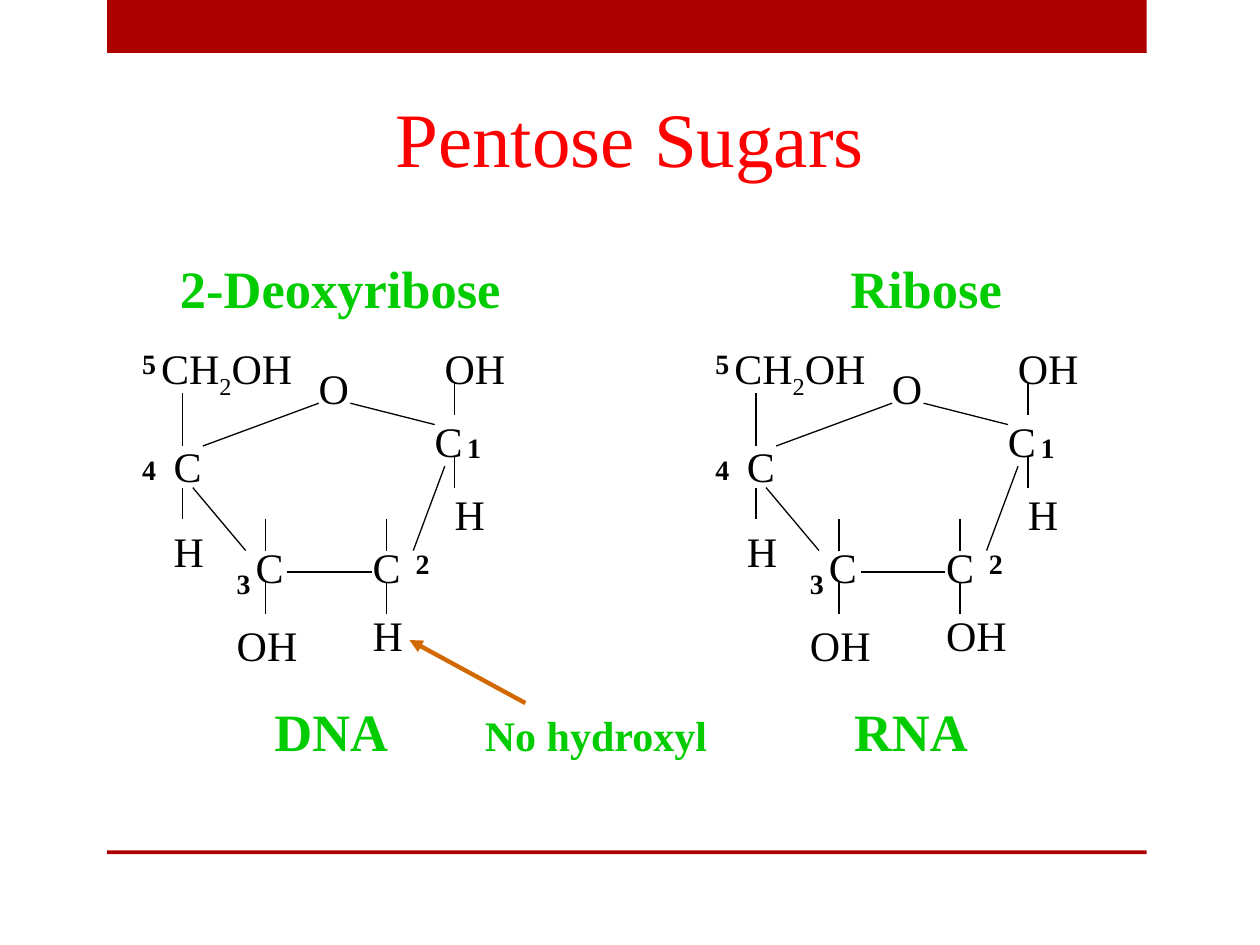
from lxml import etree
from pptx import Presentation
from pptx.dml.color import RGBColor
from pptx.enum.shapes import MSO_CONNECTOR, MSO_SHAPE
from pptx.enum.text import MSO_ANCHOR, MSO_AUTO_SIZE, PP_ALIGN
from pptx.oxml.ns import qn
from pptx.util import Inches, Pt

STRAIGHT = MSO_CONNECTOR.STRAIGHT
RECT = MSO_SHAPE.RECTANGLE
BOTTOM = MSO_ANCHOR.BOTTOM
CENTER = PP_ALIGN.CENTER
FIT_SHAPE = MSO_AUTO_SIZE.SHAPE_TO_FIT_TEXT
NO_FIT = MSO_AUTO_SIZE.NONE

FONT = "Times New Roman"
COLORS = {
    "band": "AD0101",
    "title": "FF0000",
    "label": "00CC00",
    "ink": "000000",
    "arrow": "D26900",
}


def add_text(shapes, x, y, w, h, parts, size, color="ink", bold=False):
    """Add a one-line text box; every second part is a subscript."""
    tb = shapes.add_textbox(Inches(x), Inches(y), Inches(w), Inches(h))
    tf = tb.text_frame
    tf.word_wrap = False
    tf.auto_size = FIT_SHAPE
    for i, part in enumerate(parts):
        r = tf.paragraphs[0].add_run()
        r.text = part
        r.font.name = FONT
        r.font.size = Pt(size)
        r.font.bold = bold
        r.font.color.rgb = RGBColor.from_string(COLORS[color])
        if i % 2:
            r.font._element.set("baseline", "-25000")
    return tf


def add_line(shapes, x1, y1, x2, y2, color="ink", width=0.75):
    ln = shapes.add_connector(STRAIGHT, Inches(x1), Inches(y1), Inches(x2), Inches(y2))
    ln.line.color.rgb = RGBColor.from_string(COLORS[color])
    ln.line.width = Pt(width)
    etree.SubElement(ln._element.spPr, qn("a:effectLst"))
    return ln


prs = Presentation()
prs.slide_width, prs.slide_height = Inches(10), Inches(7.5)
s = prs.slides.add_slide(prs.slide_layouts[6])

# Top band and bottom rule
for y, h in [(0, 0.42), (6.75, 0.03)]:
    sp = s.shapes.add_shape(RECT, Inches(0.85), Inches(y), Inches(8.25), Inches(h))
    sp.shadow.inherit = False
    sp.fill.solid()
    sp.fill.fore_color.rgb = RGBColor.from_string(COLORS["band"])
    sp.line.fill.background()

tf = add_text(s.shapes, 1, 0.58, 8, 0.92, ["Pentose Sugars"], 44, "title")
tf.word_wrap = True
tf.auto_size = NO_FIT
tf.vertical_anchor = BOTTOM
tf.paragraphs[0].alignment = CENTER

# Sugar ring, placed for the left-hand molecule
BONDS = [
    (2.53, 3.2, 1.61, 3.54),
    (2.78, 3.2, 3.45, 3.37),
    (1.53, 3.87, 1.95, 4.37),
    (3.53, 3.7, 3.28, 4.37),
    (2.28, 4.54, 2.95, 4.54),
    (1.45, 3.54, 1.45, 3.12),
]
# Short vertical bonds, all of one length: x, top
STUBS = [(3.61, 3.04), (3.61, 3.62), (2.11, 4.12), (2.11, 4.62),
         (3.07, 4.12), (3.07, 4.62), (1.45, 3.87)]
STUB_LENGTH = 0.25
ATOMS = [
    (2.43, 2.83, ["O"]),
    (1.28, 3.45, ["C"]),
    (3.35, 3.25, ["C"]),
    (1.93, 4.25, ["C"]),
    (2.86, 4.25, ["C"]),
    (1.18, 2.67, ["CH", "2", "OH"]),
    (3.43, 2.67, ["OH"]),
    (3.51, 3.83, ["H"]),
    (1.28, 4.12, ["H"]),
    (1.78, 4.87, ["OH"]),
]
ATOM_WIDTHS = {"C": 0.42, "O": 0.44, "H": 0.44, "OH": 0.68, "CH2OH": 1.26}
CARBON_NUMBERS = [(3.61, 3.37, "1"), (3.2, 4.29, "2"), (1.78, 4.45, "3"),
                  (1.03, 3.54, "4"), (1.03, 2.7, "5")]

# The molecules differ only in position and in the group on carbon 2
for dx, carbon2_group in [(0, "H"), (4.55, "OH")]:
    ring = s.shapes.add_group_shape().shapes
    for x1, y1, x2, y2 in BONDS:
        add_line(ring, x1 + dx, y1, x2 + dx, y2)
    for x, y in STUBS:
        add_line(ring, x + dx, y + STUB_LENGTH, x + dx, y)
    for x, y, parts in ATOMS + [(2.86, 4.79, [carbon2_group])]:
        add_text(ring, x + dx, y, ATOM_WIDTHS["".join(parts)], 0.5, parts, 24)
    for x, y, number in CARBON_NUMBERS:
        add_text(ring, x + dx, y, 0.31, 0.37, [number], 16, bold=True)

arrow = add_line(s.shapes, 3.25, 5.08, 4.17, 5.58, "arrow", 2.5)
etree.SubElement(arrow.line._get_or_add_ln(), qn("a:headEnd"), type="triangle")

for x, y, w, h, text, size in [
    (1.33, 1.98, 2.75, 0.6, "2-Deoxyribose", 30),
    (6.65, 1.98, 1.45, 0.6, "Ribose", 30),
    (2.08, 5.5, 1.1, 0.6, "DNA", 30),
    (6.68, 5.5, 1.1, 0.6, "RNA", 30),
    (3.75, 5.58, 1.97, 0.5, "No hydroxyl", 24),
]:
    add_text(s.shapes, x, y, w, h, [text], size, "label", bold=True)

prs.save("out.pptx")
